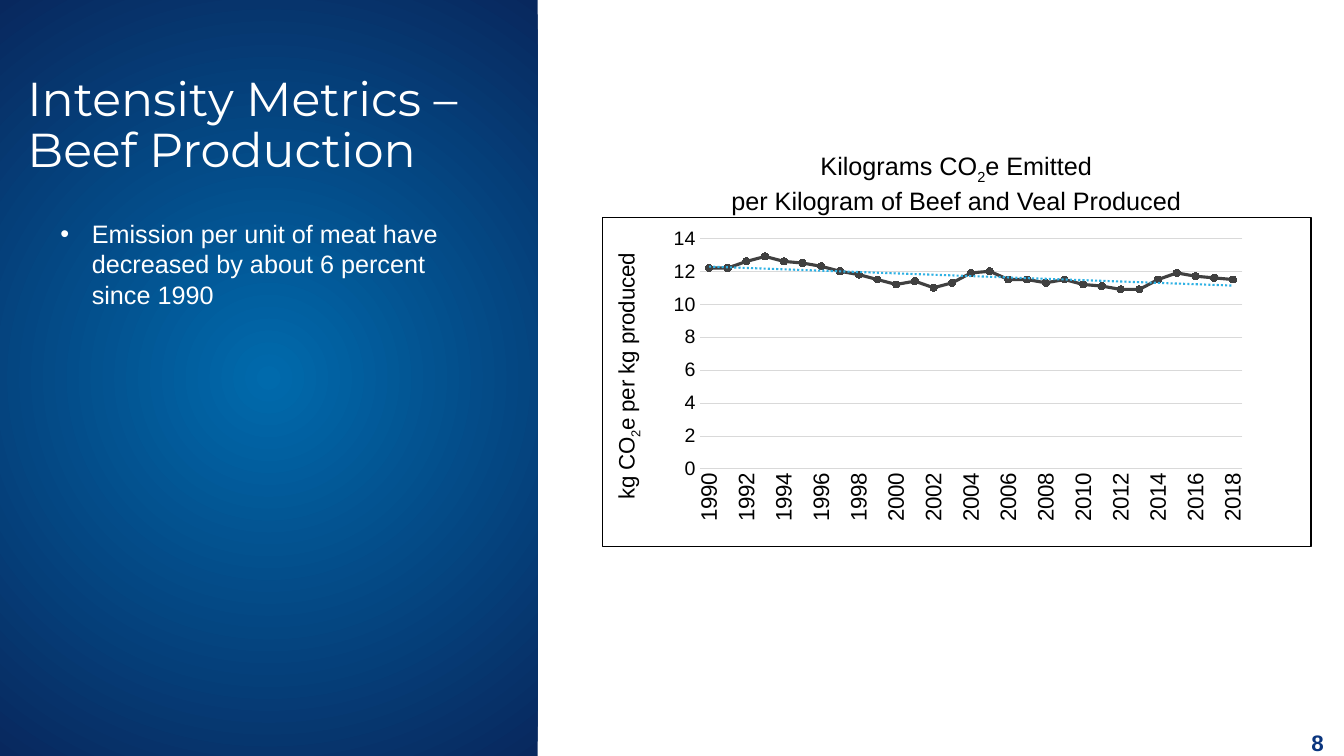
from dataclasses import dataclass

from lxml import etree
from pptx import Presentation
from pptx.chart.data import CategoryChartData
from pptx.dml.color import RGBColor as RGB
from pptx.enum.chart import XL_CHART_TYPE as CT, XL_MARKER_STYLE as Marker, XL_TICK_MARK as Tick
from pptx.enum.shapes import MSO_SHAPE as Shape
from pptx.enum.text import MSO_ANCHOR as Anchor, PP_ALIGN as Align
from pptx.oxml import parse_xml
from pptx.oxml.ns import nsdecls, qn
from pptx.util import Pt


@dataclass(frozen=True)
class Theme:
    white: str = "FFFFFF"
    black: str = "000000"
    panel_centre: str = "006AAC"
    panel_edge: str = "08285E"
    number: str = "0A357E"
    grid: str = "D9D9D9"
    series: str = "404040"
    trend: str = "2FB1E4"
    head_font: str = "Montserrat"
    body_font: str = "Arial"
    title: int = 34
    body: int = 18
    label: int = 16
    tick: int = 14
    chart: int = 11


T = Theme()
YEARS = range(1990, 2019)
INTENSITY = [12.2, 12.2, 12.6, 12.9, 12.6, 12.5, 12.3, 12, 11.8, 11.5,
             11.2, 11.4, 11, 11.3, 11.9, 12, 11.5, 11.5, 11.3, 11.5,
             11.2, 11.1, 10.9, 10.9, 11.5, 11.9, 11.7, 11.6, 11.5]


def style_font(font, size, color=T.black, name=T.body_font, bold=False):
    font.size, font.name, font.bold = Pt(size), name, bold
    font.color.rgb = RGB.from_string(color)


def add_text(p, text, size=T.body, align=Align.LEFT, sub=False, **fmt):
    p.alignment = align
    r = p.add_run()
    r.text = text
    style_font(r.font, size, **fmt)
    if sub:
        r.font._element.set("baseline", "-25000")


def add_box(s, box, anchor=Anchor.TOP):
    tf = s.shapes.add_textbox(*map(Pt, box)).text_frame
    tf.word_wrap = True
    tf.vertical_anchor = anchor
    return tf


def manual_layout(parent, index, inner=False, **frame):
    """Give a chart part a fixed place, as fractions of the chart."""
    for old in parent.findall(qn("c:layout")):
        parent.remove(old)
    target = '<c:layoutTarget val="inner"/>' if inner else ""
    modes = '<c:xMode val="edge"/><c:yMode val="edge"/>'
    values = "".join(f'<c:{key} val="{value}"/>' for key, value in frame.items())
    parent.insert(index, parse_xml(
        f'<c:layout {nsdecls("c")}><c:manualLayout>{target}{modes}{values}'
        '</c:manualLayout></c:layout>'))


def line_xml(color, width, dash="solid"):
    return (f'<a:ln w="{Pt(width)}"><a:solidFill><a:srgbClr val="{color}"/></a:solidFill>'
            f'<a:prstDash val="{dash}"/></a:ln>')


def side_panel(s, box):
    x, y, w, h = box
    # Radial gradient background, behind the title
    panel = s.shapes.add_shape(Shape.RECTANGLE, *map(Pt, box))
    panel.shadow.inherit = False
    panel.line.fill.background()
    panel.fill.gradient()
    for stop, color in zip(panel.fill.gradient_stops, (T.panel_centre, T.panel_edge)):
        stop.color.rgb = RGB.from_string(color)
    grad = panel._element.spPr.find(qn("a:gradFill"))
    grad.remove(grad.find(qn("a:lin")))
    shade = etree.SubElement(grad, qn("a:path"), path="circle")
    etree.SubElement(shade, qn("a:fillToRect"), {side: "50000" for side in "ltrb"})
    s.shapes._spTree.insert(2, panel._element)

    # Title
    title = s.shapes.title
    title.left, title.top, title.width, title.height = map(Pt, (x - 2, y + 50, w + 11, 81))
    tf = title.text_frame
    tf.word_wrap = True
    tf.vertical_anchor = Anchor.MIDDLE
    tf.margin_left = tf.margin_right = Pt(21.6)
    p = tf.paragraphs[0]
    p.line_spacing = 0.9
    add_text(p, "Intensity Metrics – Beef Production", T.title,
             color=T.white, name=T.head_font)

    # Bullet
    tf = add_box(s, (x + 36, y + 131, 297.4, 138))
    tf.margin_top = Pt(25)
    p = tf.paragraphs[0]
    add_text(p, "Emission per unit of meat have decreased by about 6 percent since 1990",
             color=T.white)
    pPr = p._p.get_or_add_pPr()
    pPr.set("marL", str(Pt(22.5)))
    pPr.set("indent", str(-Pt(22.5)))
    etree.SubElement(pPr, qn("a:buFont"), typeface=T.body_font)
    etree.SubElement(pPr, qn("a:buChar"), char="•")


def chart_heading(s, box):
    tf = add_box(s, box)
    p = tf.paragraphs[0]
    for text, sub in (("Kilograms CO", False), ("2", True), ("e Emitted", False)):
        add_text(p, text, align=Align.CENTER, sub=sub)
    add_text(tf.add_paragraph(), "per Kilogram of Beef and Veal Produced", align=Align.CENTER)


def style_axes(chart):
    cat, val = chart.category_axis, chart.value_axis
    for axis, size in ((cat, T.label), (val, T.tick)):
        axis.major_tick_mark = axis.minor_tick_mark = Tick.NONE
        style_font(axis.tick_labels.font, size)
    cat.format.line.color.rgb = RGB.from_string(T.grid)
    cat.format.line.width = Pt(0.75)
    cat_xml = chart.element.find(".//" + qn("c:catAx"))
    cat_xml.find(qn("c:txPr")).find(qn("a:bodyPr")).set("rot", "-5400000")
    cat_xml.find(qn("c:noMultiLvlLbl")).addprevious(
        parse_xml(f'<c:tickLblSkip {nsdecls("c")} val="2"/>'))

    val.minimum_scale, val.maximum_scale, val.major_unit = 0, 14, 2
    val.format.line.fill.background()
    grid = val.major_gridlines.format.line
    grid.color.rgb = RGB.from_string(T.grid)
    grid.width = Pt(0.75)

    # Value axis title, reading upwards
    tf = val.axis_title.text_frame
    for text, sub in (("kg CO", False), ("2", True), ("e per kg produced", False)):
        add_text(tf.paragraphs[0], text, T.label, Align.CENTER, sub)
    title = chart.element.find(".//" + qn("c:valAx")).find(qn("c:title"))
    body = title.find(".//" + qn("a:bodyPr"))
    body.set("rot", "-5400000")
    body.set("vert", "horz")
    manual_layout(title, 1, x=0.01, y=0.1)


def intensity_chart(s, box):
    data = CategoryChartData(number_format="General")
    data.categories = [str(year) for year in YEARS]
    data.add_series("Series 1", INTENSITY)
    chart = s.shapes.add_chart(CT.LINE_MARKERS, *map(Pt, box), data).chart
    chart.has_legend = chart.has_title = False
    style_font(chart.font, T.chart)
    style_axes(chart)

    # Series and its linear trend
    plot = chart.plots[0]
    plot.vary_by_categories = False
    series = plot.series[0]
    series.smooth = False
    dark = RGB.from_string(T.series)
    series.format.line.color.rgb = dark
    series.format.line.width = Pt(2.25)
    series.marker.style, series.marker.size = Marker.CIRCLE, 5
    series.marker.format.fill.solid()
    series.marker.format.fill.fore_color.rgb = dark
    series.marker.format.line.color.rgb = dark
    chart.element.find(".//" + qn("c:ser")).find(qn("c:cat")).addprevious(parse_xml(
        f'<c:trendline {nsdecls("c", "a")}><c:spPr>{line_xml(T.trend, 1.5, "sysDot")}</c:spPr>'
        '<c:trendlineType val="linear"/><c:dispRSqr val="0"/><c:dispEq val="0"/></c:trendline>'))

    # Plot place and chart frame
    manual_layout(chart.element.find(".//" + qn("c:plotArea")), 0, inner=True,
                  x=0.137, y=0.063, w=0.766, h=0.701)
    chart.element.find(qn("c:chart")).addnext(parse_xml(
        f'<c:spPr {nsdecls("c", "a")}><a:solidFill><a:srgbClr val="{T.white}"/></a:solidFill>'
        f'{line_xml(T.black, 1)}</c:spPr>'))


def slide_number(s, box):
    tf = add_box(s, box, Anchor.MIDDLE)
    tf.margin_right = Pt(14.4)
    add_text(tf.paragraphs[0], "8", T.label, Align.RIGHT, color=T.number, bold=True)


def main():
    prs = Presentation()
    prs.slide_width, prs.slide_height = Pt(960), Pt(540)
    s = prs.slides.add_slide(prs.slide_layouts[5])
    side_panel(s, (0, 0, 384, 540))
    slide_number(s, (909.5, 517, 50.5, 26.5))
    intensity_chart(s, (430, 155, 507, 236))
    chart_heading(s, (411, 104, 544, 51))
    prs.save("out.pptx")


if __name__ == "__main__":
    main()
